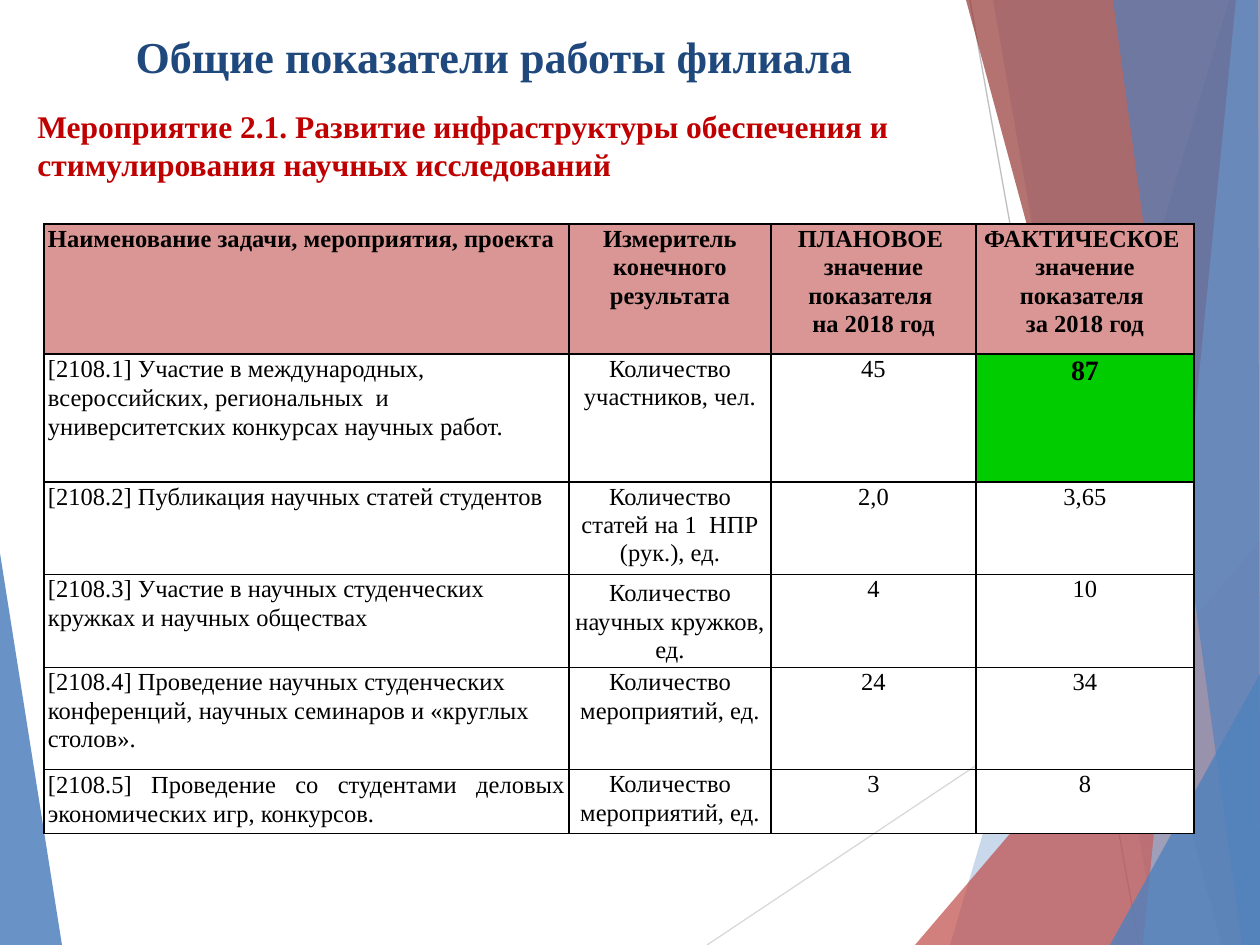
from lxml.etree import SubElement as Sub
from pptx import Presentation
from pptx.dml.color import RGBColor as Rgb
from pptx.enum.shapes import MSO_CONNECTOR as Conn
from pptx.enum.text import MSO_ANCHOR as Anchor, MSO_AUTO_SIZE as Auto, PP_ALIGN as Align
from pptx.oxml import parse_xml
from pptx.oxml.ns import nsdecls, qn
from pptx.util import Emu, Pt

SCALE = 914400 / 126
WIDE, HIGH = 1260, 945
FACE = "Times New Roman"
HUES = {
    "blue": "4F81BD", "pale": "95B3D7", "red": "C0504D", "dark": "953735",
    "navy": "1F497D", "crimson": "C00000", "rose": "D99694", "green": "00CC00",
    "white": "FFFFFF", "black": "000000", "silver": "D9D9D9", "grey": "BFBFBF",
}

# Decor: points, colour, opacity in percent
LEFT = ([(0, 553), (62, HIGH), (0, HIGH)], "blue", 85)
RIGHT = [
    ([(1229, 0), (950, HIGH), (WIDE, HIGH), (WIDE, 0)], "blue", 30),
    ([(993, 0), (1158, HIGH), (WIDE, HIGH), (WIDE, 0)], "blue", 20),
    ([(915, HIGH), (WIDE, 541), (WIDE, HIGH)], "red", 72),
    ([(966, 0), (1222, HIGH), (WIDE, HIGH), (WIDE, 0)], "dark", 70),
    ([(1236, 0), (1143, HIGH), (WIDE, HIGH), (WIDE, 0)], "pale", 70),
    ([(1113, 0), (1242, HIGH), (WIDE, HIGH), (1258, 0)], "blue", 65),
    ([(1110, HIGH), (WIDE, 674), (WIDE, HIGH)], "blue", 80),
]
RAYS = [((707, HIGH), (WIDE, 576), "silver"), ((970, 0), (1139, HIGH), "grey")]

COLS = [525, 202, 205, 218]
ROWS = [130, 128, 92, 93, 102, 64]
HEAD = [
    "Наименование задачи, мероприятия, проекта",
    "Измеритель конечного результата",
    "ПЛАНОВОЕ \nзначение показателя \nна 2018 год",
    "ФАКТИЧЕСКОЕ \nзначение показателя \nза 2018 год",
]
DATA = [
    ["[2108.1] Участие в международных, всероссийских, региональных  и "
     "университетских конкурсах научных работ.",
     "Количество участников, чел.", "45", "87"],
    ["[2108.2] Публикация научных статей студентов",
     "Количество статей на 1  НПР (рук.), ед.", "2,0", "3,65"],
    ["[2108.3] Участие в научных студенческих кружках и научных обществах",
     "Количество научных кружков, ед.", "4", "10"],
    ["[2108.4] Проведение научных студенческих конференций, научных семинаров "
     "и «круглых столов».",
     "Количество мероприятий, ед.", "24", "34"],
    ["[2108.5] Проведение со студентами деловых экономических игр, конкурсов.",
     "Количество мероприятий, ед.", "3", "8"],
]


def px(num):
    return Emu(round(num * SCALE))


def hue(name):
    return Rgb.from_string(HUES[name])


def put(obj, **vals):
    for key, val in vals.items():
        setattr(obj, key, val)


def place(shape, left, top, width, height):
    put(shape, left=px(left), top=px(top), width=px(width), height=px(height))


def write(frame, text, size, tint, bold, align=Align.LEFT, space=None):
    for num, line in enumerate(text.split("\n")):
        para = frame.add_paragraph() if num else frame.paragraphs[0]
        put(para, alignment=align, line_spacing=space)
        run = para.add_run()
        run.text = line
        put(run.font, name=FACE, size=Pt(size), bold=bold)
        run.font.color.rgb = hue(tint)


def add_facet(slide, points, tint, alpha):
    pen = slide.shapes.build_freeform(*points[0], scale=SCALE)
    pen.add_line_segments(points[1:], close=True)
    shape = pen.convert_to_shape()
    shape.shadow.inherit = False
    shape.fill.solid()
    shape.fill.fore_color.rgb = hue(tint)
    shape.line.fill.background()
    clr = shape.element.spPr.find(qn("a:solidFill"))[0]
    Sub(clr, qn("a:alpha"), val=str(alpha * 1000))


def add_ray(slide, start, end, tint):
    ray = slide.shapes.add_connector(
        Conn.STRAIGHT, *(px(num) for num in start + end))
    ray.line.width = Pt(0.75)
    ray.line.color.rgb = hue(tint)
    Sub(ray.element.spPr, qn("a:effectLst"))


def add_edges(cell):
    props = cell._tc.get_or_add_tcPr()
    for side in "LRTB":
        props.append(parse_xml(
            f'<a:ln{side} {nsdecls("a")} w="12700"><a:solidFill>'
            f'<a:srgbClr val="{HUES["black"]}"/></a:solidFill></a:ln{side}>'))


def paint(cell, tint):
    if tint:
        cell.fill.solid()
        cell.fill.fore_color.rgb = hue(tint)
    else:
        cell.fill.background()


def add_title(slide):
    title = slide.shapes.title
    place(title, 57, 21, 874, 69)
    put(title.text_frame, word_wrap=True, auto_size=Auto.NONE,
        vertical_anchor=Anchor.MIDDLE)
    write(title.text_frame, "Общие показатели работы филиала",
          25.2, "navy", True, Align.CENTER)
    # Bring the title in front of the decor
    title.element.getparent().append(title.element)


def add_lead(slide):
    box = slide.shapes.add_textbox(px(25), px(101), px(1118), px(89))
    put(box.text_frame, word_wrap=True, auto_size=Auto.SHAPE_TO_FIT_TEXT)
    write(box.text_frame,
          "Мероприятие 2.1.\u00a0Развитие инфраструктуры обеспечения и "
          "стимулирования научных исследований", 18, "crimson", True)


def add_grid(slide):
    cells = [HEAD] + DATA
    grid = slide.shapes.add_table(
        len(ROWS), len(COLS), px(44), px(224),
        px(sum(COLS)), px(sum(ROWS))).table
    put(grid, first_row=False, horz_banding=False)
    for col, width in zip(grid.columns, COLS):
        col.width = px(width)
    for row, height in zip(grid.rows, ROWS):
        row.height = px(height)
    last = len(ROWS) - 1
    for r, texts in enumerate(cells):
        for c, text in enumerate(texts):
            cell = grid.cell(r, c)
            star = (r, c) == (1, 3)
            put(cell, margin_left=px(4), margin_right=px(4),
                margin_top=0, margin_bottom=0,
                vertical_anchor=Anchor.MIDDLE if (r, c) == (3, 1) else Anchor.TOP)
            add_edges(cell)
            paint(cell, "rose" if r == 0 else "green" if star
                  else "white" if c == 3 else None)
            side = Align.JUSTIFY if r == last else Align.LEFT
            write(cell.text_frame, text, 16 if star else 14, "black",
                  r == 0 or star, Align.CENTER if c else side,
                  1.05 if c or r in (3, 4) else 1.07)


def main():
    deck = Presentation()
    put(deck, slide_width=px(WIDE), slide_height=px(HIGH))
    slide = deck.slides.add_slide(deck.slide_layouts[5])
    # Decor, back to front
    add_facet(slide, *LEFT)
    for ray in RAYS:
        add_ray(slide, *ray)
    for facet in RIGHT:
        add_facet(slide, *facet)
    # Content
    add_title(slide)
    add_lead(slide)
    add_grid(slide)
    deck.save("out.pptx")


if __name__ == "__main__":
    main()
